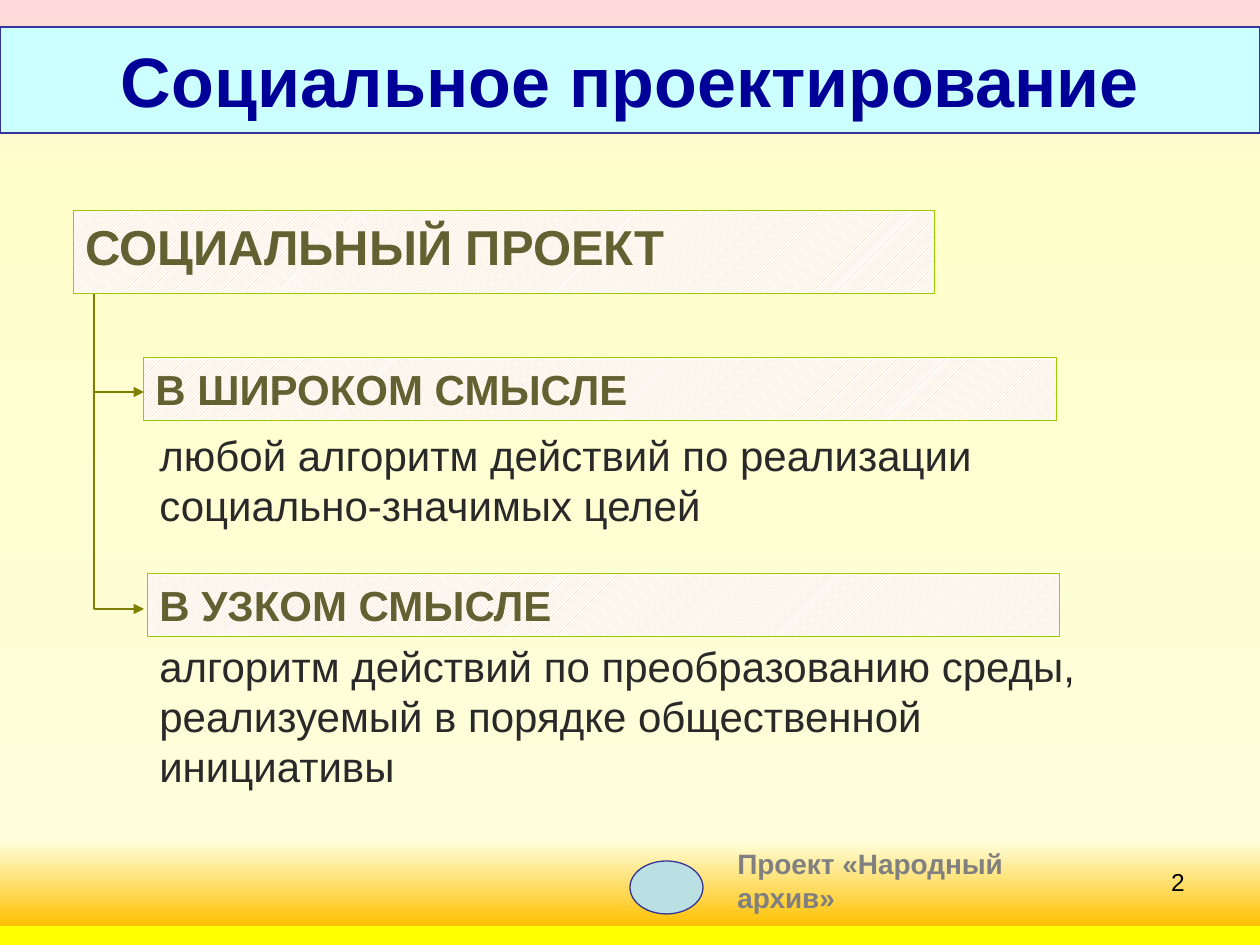
from lxml.etree import SubElement
from pptx import Presentation
from pptx.dml.color import RGBColor
from pptx.enum.dml import MSO_PATTERN
from pptx.enum.shapes import MSO_CONNECTOR, MSO_SHAPE
from pptx.enum.text import MSO_ANCHOR, PP_ALIGN
from pptx.oxml.ns import qn
from pptx.util import Emu, Pt

SCALE = 914400 / 126  # EMU per px


def color(hex_string):
    return RGBColor.from_string(hex_string)


def add_box(kind, place, text="", size=24, text_color="292929", bold=False,
            align=PP_ALIGN.LEFT, anchor=MSO_ANCHOR.TOP):
    """Add a text box (kind None) or a preset shape with formatted text."""
    lengths = [Emu(round(px * SCALE)) for px in place]
    if kind is None:
        shape = slide.shapes.add_textbox(*lengths)
    else:
        shape = slide.shapes.add_shape(kind, *lengths)
        shape.shadow.inherit = False
    frame = shape.text_frame
    frame.word_wrap = True
    frame.vertical_anchor = anchor
    frame.text = text
    paragraph = frame.paragraphs[0]
    paragraph.alignment = align
    for run in paragraph.runs:
        run.font.name = "Arial"
        run.font.size = Pt(size)
        run.font.bold = bold
        run.font.color.rgb = color(text_color)
    return shape


presentation = Presentation()
presentation.slide_width = Emu(round(1260 * SCALE))
presentation.slide_height = Emu(round(945 * SCALE))
slide = presentation.slides.add_slide(presentation.slide_layouts[6])

# Background gradient, top to bottom
background = slide.background.fill
background.gradient()
background.gradient_angle = 270
stop_list = next(slide.background._cSld.iter(qn("a:gsLst")))
for stop in list(stop_list):
    stop_list.remove(stop)
for percent, hex_string in [(1, "FFD9D9"), (18, "FFFFCC"), (89, "FEFEDA"),
                            (98, "FFC000"), (98, "FFFF00")]:
    stop = SubElement(stop_list, qn("a:gs"), pos=str(percent * 1000))
    SubElement(stop, qn("a:srgbClr"), val=hex_string)

# Slide number
add_box(None, (903, 861, 294, 66), "2", 14, "000000", align=PP_ALIGN.RIGHT)

# Title band and footer ellipse
title = add_box(MSO_SHAPE.RECTANGLE, (0, 27, 1260, 106), "Социальное проектирование",
                40, "000099", True, PP_ALIGN.CENTER, MSO_ANCHOR.MIDDLE)
ellipse = add_box(MSO_SHAPE.OVAL, (630, 861, 73, 53))
for shape, fill_color in [(title, "CCFFFF"), (ellipse, "BBE0E3")]:
    shape.fill.solid()
    shape.fill.fore_color.rgb = color(fill_color)
    shape.line.color.rgb = color("333399")
    shape.line.width = Pt(0.75)

# Hatched headings
for place, text, size in [
    ((73, 210, 861, 84), "СОЦИАЛЬНЫЙ ПРОЕКТ", 28),
    ((143, 357, 913, 64), "В ШИРОКОМ СМЫСЛЕ", 24),
    ((147, 573, 913, 64), "В УЗКОМ СМЫСЛЕ", 24),
]:
    heading = add_box(MSO_SHAPE.RECTANGLE, place, text, size, "626131", True,
                      PP_ALIGN.JUSTIFY)
    heading.fill.patterned()
    heading.fill.pattern = MSO_PATTERN.LIGHT_UPWARD_DIAGONAL
    heading.fill.fore_color.rgb = color("FFCC99")
    heading.fill.back_color.rgb = color("FFFFFF")
    heading.line.color.rgb = color("99CC00")
    heading.line.width = Pt(0.5)

# Trunk and two arrow branches
for ends, has_arrow in [((94, 294, 94, 609), False),
                        ((94, 609, 144, 609), True),
                        ((94, 392, 144, 392), True)]:
    connector = slide.shapes.add_connector(
        MSO_CONNECTOR.STRAIGHT, *[Emu(round(px * SCALE)) for px in ends])
    connector.line.color.rgb = color("808000")
    connector.line.width = Pt(1.25)
    if has_arrow:
        SubElement(connector.line._get_or_add_ln(), qn("a:tailEnd"), type="triangle")
    SubElement(connector._element.spPr, qn("a:effectLst"))

# Definitions
add_box(None, (147, 423, 914, 113),
        "любой алгоритм действий по реализации социально-значимых целей")
add_box(None, (147, 634, 1008, 164),
        "алгоритм действий по преобразованию среды, реализуемый в порядке "
        "общественной инициативы")

# Footer
add_box(None, (725, 840, 378, 81), "Проект «Народный архив»", 16, "808080", True,
        anchor=MSO_ANCHOR.MIDDLE)

presentation.save("out.pptx")
